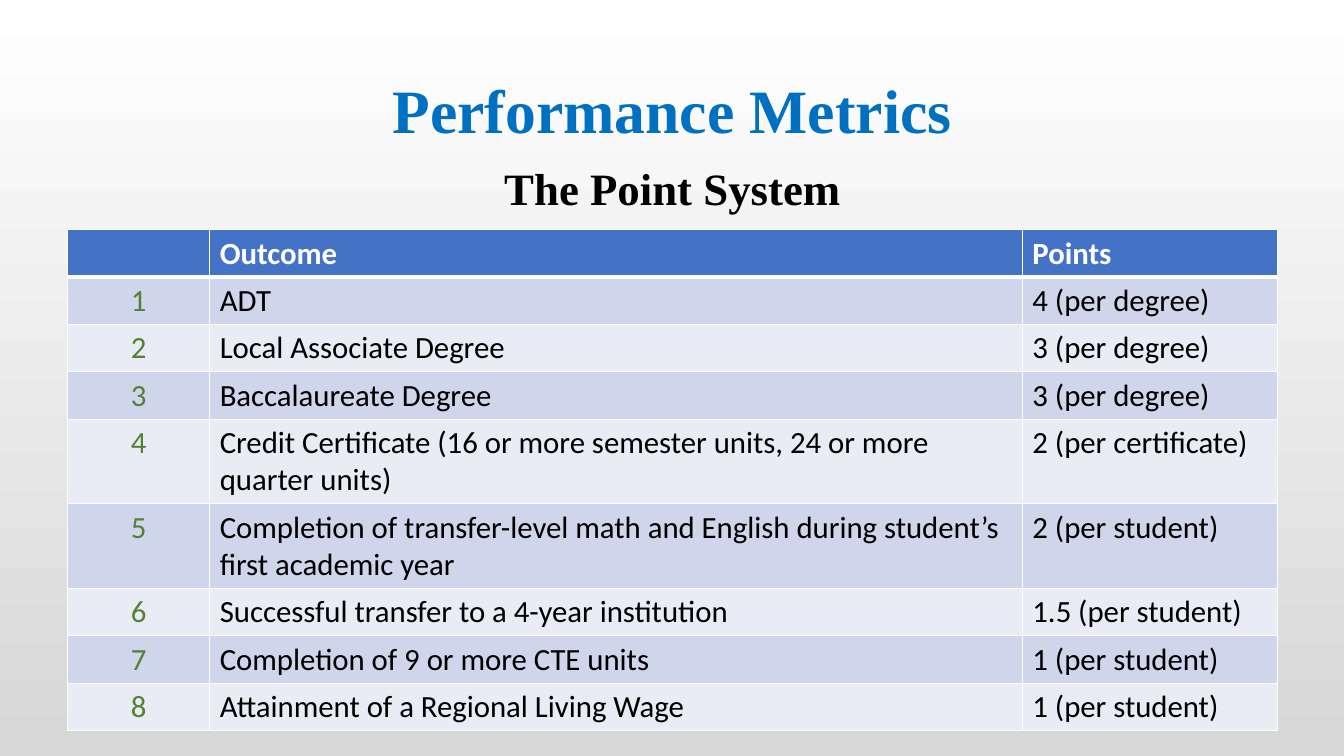
from pptx import Presentation
from pptx.dml.color import RGBColor as RGB
from pptx.enum.text import MSO_ANCHOR as Anchor, PP_ALIGN as Align
from pptx.oxml import parse_xml
from pptx.oxml.ns import nsdecls
from pptx.util import Pt

PX = 9144
WHITE = RGB(0xFF, 0xFF, 0xFF)
BLACK = RGB(0, 0, 0)
GRAY = RGB(0xD7, 0xD7, 0xD7)
SKY = RGB(0x00, 0x70, 0xC0)
BLUE = RGB(0x44, 0x72, 0xC4)
GREEN = RGB(0x54, 0x82, 0x35)
BANDS = [RGB(0xE9, 0xEB, 0xF5), RGB(0xCF, 0xD5, 0xEA)]
SERIF = "Times New Roman"


def write(frame, text, size=22, font="Calibri", color=BLACK, bold=False,
          align=Align.LEFT, spacing=None):
    frame.word_wrap = True
    para = frame.paragraphs[0]
    para.alignment = align
    para.line_spacing = spacing
    run = para.add_run()
    run.text = text
    run.font.size = Pt(size)
    run.font.name = font
    run.font.bold = bold
    run.font.color.rgb = color


def edge(cell, side, width):
    cell._tc.get_or_add_tcPr().append(parse_xml(
        f'<a:ln{side} {nsdecls("a")} w="{Pt(width)}"><a:solidFill>'
        f'<a:srgbClr val="{WHITE}"/></a:solidFill></a:ln{side}>'))


deck = Presentation()
deck.slide_width = 1333 * PX
deck.slide_height = 750 * PX
slide = deck.slides.add_slide(deck.slide_layouts[5])

back = slide.background.fill
back.gradient()
back.gradient_angle = 270
for stop, color in zip(back.gradient_stops, [WHITE, GRAY]):
    stop.color.rgb = color

title = slide.shapes.title
title.left, title.top = 92 * PX, 40 * PX
title.width, title.height = 1150 * PX, 145 * PX
title.text_frame.vertical_anchor = Anchor.MIDDLE
write(title.text_frame, "Performance Metrics", size=44, font=SERIF,
      color=SKY, bold=True, align=Align.CENTER, spacing=0.9)

sub = slide.shapes.add_textbox(92 * PX, 161 * PX, 1150 * PX, 60 * PX)
write(sub.text_frame, "The Point System", size=32, font=SERIF,
      bold=True, align=Align.CENTER, spacing=0.9)

rows = [
    ("Outcome", "Points"),
    ("ADT", "4 (per degree)"),
    ("Local Associate Degree", "3 (per degree)"),
    ("Baccalaureate Degree", "3 (per degree)"),
    ("Credit Certificate (16 or more semester units, 24 or more quarter units)",
     "2 (per certificate)"),
    ("Completion of transfer-level math and English during student’s first academic year",
     "2 (per student)"),
    ("Successful transfer to a 4-year institution", "1.5 (per student)"),
    ("Completion of 9 or more CTE units", "1 (per student)"),
    ("Attainment of a Regional Living Wage", "1 (per student)"),
]
tall = (4, 5)
table = slide.shapes.add_table(
    len(rows), 3, 67 * PX, 228 * PX, 1200 * PX, 497 * PX).table
for col, width in zip(table.columns, [141, 806, 253]):
    col.width = width * PX

for r, (goal, points) in enumerate(rows):
    table.rows[r].height = (84 if r in tall else 47) * PX
    head = r == 0
    for c, text in enumerate(["" if head else str(r), goal, points]):
        cell = table.cell(r, c)
        for side in "LRTB":
            thick = (r, side) in [(0, "B"), (1, "T")]
            edge(cell, side, 3 if thick else 1)
        cell.fill.solid()
        cell.fill.fore_color.rgb = BLUE if head else BANDS[r % 2]
        if text:
            write(cell.text_frame, text, bold=head,
                  color=WHITE if head else BLACK if c else GREEN,
                  align=Align.LEFT if c else Align.CENTER)

deck.save("out.pptx")
